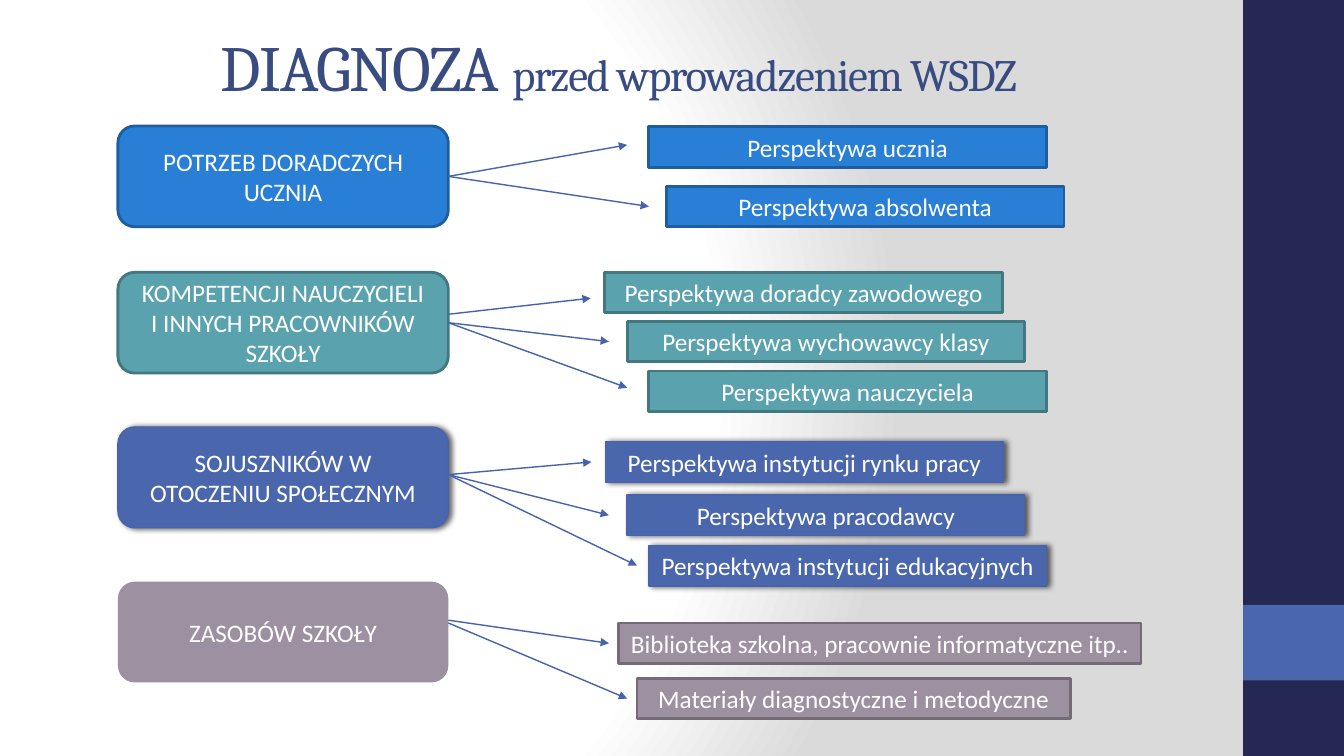
import pptx
import pptx.dml.color
import pptx.enum.shapes
import pptx.enum.text
import pptx.oxml
import pptx.oxml.ns
import pptx.util
from dataclasses import dataclass

Pt = pptx.util.Pt
SHAPE = pptx.enum.shapes.MSO_SHAPE
NS = pptx.oxml.ns.nsdecls("a")


@dataclass(frozen=True)
class Theme:
    navy: str = "242852"
    indigo: str = "4A66AC"
    title: str = "384C81"
    arrow: str = "4663AB"
    white: str = "FFFFFF"
    grey: str = "DADADA"
    blue: tuple = ("297FD5", "1E5E9E", 2)
    teal: tuple = ("5AA2AE", "437881", 2)
    violet: tuple = ("4A66AC", "4663AB", 1)
    mauve: tuple = ("9D90A0", "746B76", 2)
    heading_font: str = "Cambria"
    body_font: str = "Calibri"
    heading_size: int = 46
    subheading_size: int = 32
    body_size: int = 18


theme = Theme()


def add_text(paragraph, text, font, size, color):
    run = paragraph.add_run()
    run.text = text
    run.font.name = font
    run.font.size = Pt(size)
    run.font.color.rgb = pptx.dml.color.RGBColor.from_string(color)
    return run


def add_block(preset, left, top, width, height, fill, line=None, weight=0, label="", glow=False):
    block = slide.shapes.add_shape(preset, Pt(left), Pt(top), Pt(width), Pt(height))
    block.shadow.inherit = False
    block.fill.solid()
    block.fill.fore_color.rgb = pptx.dml.color.RGBColor.from_string(fill)
    if line:
        block.line.color.rgb = pptx.dml.color.RGBColor.from_string(line)
        block.line.width = Pt(weight)
    else:
        block.line.fill.background()
    if glow:
        effects = block._element.spPr.find(pptx.oxml.ns.qn("a:effectLst"))
        effects.append(pptx.oxml.parse_xml(
            f'<a:outerShdw {NS} blurRad="{Pt(4)}" dist="{Pt(2)}" dir="0" rotWithShape="0">'
            '<a:srgbClr val="000000"><a:alpha val="60000"/></a:srgbClr></a:outerShdw>'))
    if label:
        block.text_frame.word_wrap = True
        block.text_frame.vertical_anchor = pptx.enum.text.MSO_ANCHOR.MIDDLE
        paragraph = block.text_frame.paragraphs[0]
        paragraph.alignment = pptx.enum.text.PP_ALIGN.CENTER
        for number, part in enumerate(label.split("\n")):
            if number:
                paragraph.add_line_break()
            add_text(paragraph, part, theme.body_font, theme.body_size, theme.white)
    return block


deck = pptx.Presentation()
deck.slide_width, deck.slide_height = Pt(960), Pt(540)
slide = deck.slides.add_slide(deck.slide_layouts[6])

# Background: radial gradient from white to grey
slide.background.fill.solid()
background = slide.element.xpath(".//p:bgPr")[0]
stops = "".join(f'<a:gs pos="{pos}"><a:srgbClr val="{color}"/></a:gs>' for pos, color in
                ((0, theme.white), (75000, theme.white), (100000, theme.grey)))
background.replace(background[0], pptx.oxml.parse_xml(
    f'<a:gradFill {NS} rotWithShape="1"><a:gsLst>{stops}</a:gsLst><a:path path="circle">'
    '<a:fillToRect l="20000" t="50000" r="100000" b="50000"/></a:path></a:gradFill>'))

# Side band
add_block(SHAPE.RECTANGLE, 888, 0, 72, 540, theme.navy)
add_block(SHAPE.RECTANGLE, 888, 432, 72, 54, theme.indigo)

# Title
heading = slide.shapes.add_textbox(Pt(42), Pt(13.5), Pt(800), Pt(67)).text_frame
heading.word_wrap = True
heading.vertical_anchor = pptx.enum.text.MSO_ANCHOR.MIDDLE
heading.paragraphs[0].alignment = pptx.enum.text.PP_ALIGN.CENTER
for words, size in (("DIAGNOZA ", theme.heading_size),
                    ("przed wprowadzeniem WSDZ", theme.subheading_size)):
    run = add_text(heading.paragraphs[0], words, theme.heading_font, size, theme.title)
    run.font._element.set("spc", "-100")

# Diagnosis areas: label, top, colours, outlined, shadowed, perspectives
# Perspective: label, left, top, width, arrow start height, arrow tip
AREA_LEFT, AREA_WIDTH, AREA_HEIGHT = 84.25, 236, 72
WIDTH, HEIGHT = 284, 29
areas = [
    ("POTRZEB DORADCZYCH UCZNIA", 90, theme.blue, True, False, [
        ("Perspektywa ucznia", 463.5, 90.5, WIDTH, 126, (448, 103.5)),
        ("Perspektywa absolwenta", 476, 133, WIDTH, 126, (463.5, 147.5))]),
    ("KOMPETENCJI NAUCZYCIELI\nI INNYCH PRACOWNIKÓW SZKOŁY", 194.5, theme.teal, True, False, [
        ("Perspektywa doradcy zawodowego", 432, 194.5, WIDTH, 224.5, (422, 213)),
        ("Perspektywa wychowawcy klasy", 448, 229.5, WIDTH, 230.5, (435, 244)),
        ("Perspektywa nauczyciela", 463.5, 265, WIDTH, 230.5, (448, 277))]),
    ("SOJUSZNIKÓW W OTOCZENIU SPOŁECZNYM", 305, theme.violet, True, True, [
        ("Perspektywa instytucji rynku pracy", 432.5, 315.5, WIDTH, 339, (422.5, 330)),
        ("Perspektywa pracodawcy", 448, 353.5, WIDTH, 339, (435, 368)),
        ("Perspektywa instytucji edukacyjnych", 463.5, 389.5, WIDTH, 339, (455, 404))]),
    ("ZASOBÓW SZKOŁY", 415.5, theme.mauve, False, False, [
        ("Biblioteka szkolna, pracownie informatyczne itp..", 442, 445, 373, 443, (435, 459.5)),
        ("Materiały diagnostyczne i metodyczne", 455, 484.5, 309.5, 445, (448, 499))]),
]

for area_label, area_top, (fill, line, weight), outlined, shadowed, perspectives in areas:
    area = add_block(SHAPE.ROUNDED_RECTANGLE, AREA_LEFT, area_top, AREA_WIDTH, AREA_HEIGHT,
                     fill, line if outlined else None, weight, area_label, shadowed)
    for label, left, top, width, start, (tip_x, tip_y) in perspectives:
        add_block(SHAPE.RECTANGLE, left, top, width, HEIGHT, fill, line, weight, label, shadowed)

        # Arrow from the area towards its perspective
        arrow = slide.shapes.add_connector(
            pptx.enum.shapes.MSO_CONNECTOR.STRAIGHT,
            Pt(AREA_LEFT + AREA_WIDTH), Pt(start), Pt(tip_x), Pt(tip_y))
        if start == area_top + AREA_HEIGHT / 2:
            arrow.begin_connect(area, 3)
        arrow.line.color.rgb = pptx.dml.color.RGBColor.from_string(theme.arrow)
        arrow.line.width = Pt(1)
        arrow.line._get_or_add_ln().append(
            pptx.oxml.parse_xml(f'<a:tailEnd {NS} type="triangle"/>'))
        arrow._element.spPr.append(pptx.oxml.parse_xml(f"<a:effectLst {NS}/>"))

deck.save("out.pptx")
